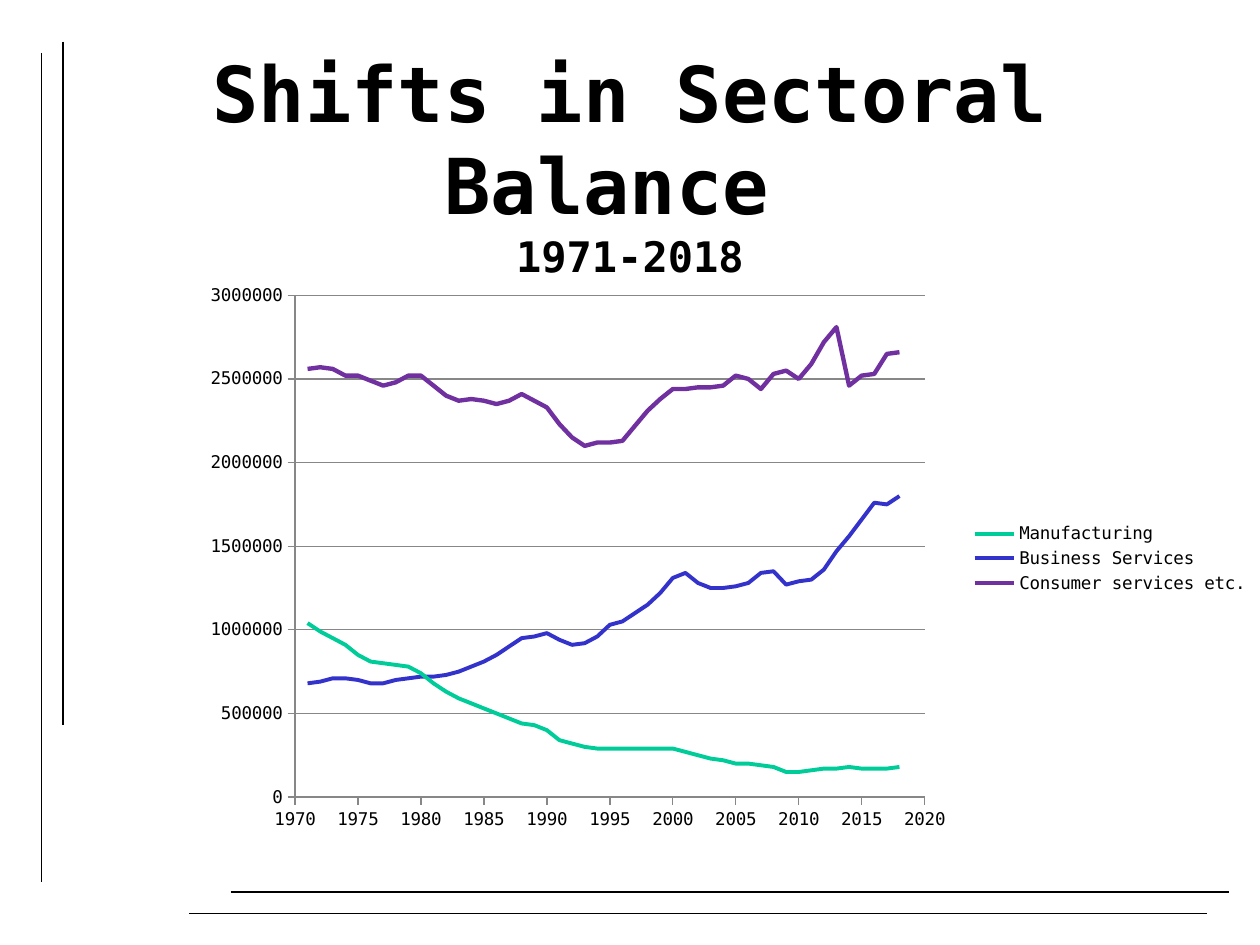
import pptx
import pptx.chart.data
import pptx.dml.color
import pptx.enum.chart
import pptx.enum.shapes
import pptx.enum.text
import pptx.oxml
import pptx.oxml.ns
import pptx.util

FONT = "DejaVu Sans Mono"
COLOURS = {
    "ink": "000000",
    "grid": "878787",
    "Manufacturing": "00CC99",
    "Business Services": "3333CC",
    "Consumer services etc.": "7030A0",
}
LINE_POINTS = {"Consumer services etc.": 2.5}
FIRST_YEAR = 1971
# Yearly values in units of ten thousand
JOBS = {
    "Manufacturing": [
        104, 99, 95, 91, 85, 81, 80, 79, 78, 74, 68, 63, 59, 56, 53, 50,
        47, 44, 43, 40, 34, 32, 30, 29, 29, 29, 29, 29, 29, 29, 27, 25,
        23, 22, 20, 20, 19, 18, 15, 15, 16, 17, 17, 18, 17, 17, 17, 18],
    "Business Services": [
        68, 69, 71, 71, 70, 68, 68, 70, 71, 72, 72, 73, 75, 78, 81, 85,
        90, 95, 96, 98, 94, 91, 92, 96, 103, 105, 110, 115, 122, 131, 134, 128,
        125, 125, 126, 128, 134, 135, 127, 129, 130, 136, 147, 156, 166, 176, 175, 180],
    "Consumer services etc.": [
        256, 257, 256, 252, 252, 249, 246, 248, 252, 252, 246, 240, 237, 238, 237, 235,
        237, 241, 237, 233, 223, 215, 210, 212, 212, 213, 222, 231, 238, 244, 244, 245,
        245, 246, 252, 250, 244, 253, 255, 250, 259, 272, 281, 246, 252, 253, 265, 266],
}


def colour(name):
    return pptx.dml.color.RGBColor.from_string(COLOURS[name])


def share(box, left, top, width=0, height=0):
    """Return the part of a box given by shares of its size."""
    x, y, w, h = box
    return int(x + left * w), int(y + top * h), int(width * w), int(height * h)


def style_line(line, name, points):
    line.color.rgb = colour(name)
    line.width = pptx.util.Pt(points)


def style_font(font, size, bold=False):
    font.name = FONT
    font.size = pptx.util.Pt(size)
    font.bold = bold
    font.color.rgb = colour("ink")


def add_rules(page, box):
    # Crossing pairs of thin rules at the left and the bottom
    rules = [(0.033, 0.056, 0.033, 0.933), (0.15, 0.967, 0.958, 0.967),
             (0.183, 0.944, 0.975, 0.944), (0.05, 0.044, 0.05, 0.767)]
    for x1, y1, x2, y2 in rules:
        start, end = share(box, x1, y1)[:2], share(box, x2, y2)[:2]
        rule = page.shapes.add_connector(
            pptx.enum.shapes.MSO_CONNECTOR.STRAIGHT, *start, *end)
        style_line(rule.line, "ink", 0.75)
        rule._element.spPr.append(pptx.oxml.parse_xml(
            "<a:effectLst %s/>" % pptx.oxml.ns.nsdecls("a")))


def add_title(page, box):
    frame = page.shapes.add_textbox(*box).text_frame
    frame.word_wrap = True
    frame.vertical_anchor = pptx.enum.text.MSO_ANCHOR.MIDDLE
    para = frame.paragraphs[0]
    para.alignment = pptx.enum.text.PP_ALIGN.CENTER
    style_font(para.font, 44, bold=True)
    heading = para.add_run()
    heading.text = "Shifts in Sectoral Balance "
    style_font(heading.font, 44, bold=True)
    para.add_line_break()
    period = para.add_run()
    period.text = "1971-2018"
    style_font(period.font, 24, bold=True)


def set_layout(part, left, top, width, height, inner=False):
    """Place a chart part by shares of the chart's size."""
    target = '<c:layoutTarget val="inner"/>' if inner else ""
    sizes = "".join(
        '<c:%s val="%s"/>' % item
        for item in zip("xywh", (left, top, width, height)))
    layout = pptx.oxml.parse_xml(
        '<c:layout %s><c:manualLayout>%s<c:xMode val="edge"/>'
        '<c:yMode val="edge"/>%s</c:manualLayout></c:layout>'
        % (pptx.oxml.ns.nsdecls("c"), target, sizes))
    for old in part.findall(pptx.oxml.ns.qn("c:layout")):
        part.remove(old)
    # The layout follows the legend position, or comes first in the plot area
    position = part.find(pptx.oxml.ns.qn("c:legendPos"))
    part.insert(0 if position is None else 1, layout)


def style_axis(axis, low, high, step):
    axis.minimum_scale, axis.maximum_scale, axis.major_unit = low, high, step
    axis.major_tick_mark = pptx.enum.chart.XL_TICK_MARK.OUTSIDE
    axis.minor_tick_mark = pptx.enum.chart.XL_TICK_MARK.NONE
    axis.tick_labels.number_format = "General"
    axis.tick_labels.number_format_is_linked = False
    style_line(axis.format.line, "grid", 0.75)


def add_sector_chart(page, box):
    data = pptx.chart.data.XyChartData()
    for name, values in JOBS.items():
        sector = data.add_series(name)
        for year, value in enumerate(values, FIRST_YEAR):
            sector.add_data_point(year, value * 10000)
    chart = page.shapes.add_chart(
        pptx.enum.chart.XL_CHART_TYPE.XY_SCATTER_LINES_NO_MARKERS, *box, data).chart
    chart.has_title = False
    style_font(chart.font, 10)

    # Axes
    style_axis(chart.category_axis, 1970, 2020, 5)
    style_axis(chart.value_axis, 0, 3000000, 500000)
    chart.category_axis.has_major_gridlines = False
    chart.value_axis.has_major_gridlines = True
    style_line(chart.value_axis.major_gridlines.format.line, "grid", 0.75)

    # Sector lines
    chart.plots[0].vary_by_categories = False
    for sector in chart.plots[0].series:
        sector.smooth = False
        sector.marker.style = pptx.enum.chart.XL_MARKER_STYLE.NONE
        style_line(sector.format.line, sector.name, LINE_POINTS.get(sector.name, 2.25))

    # Legend and plot positions
    chart.has_legend = True
    chart.legend.position = pptx.enum.chart.XL_LEGEND_POSITION.RIGHT
    chart.legend.include_in_layout = False
    set_layout(chart.legend._element, 0.73, 0.43, 0.26, 0.14)
    set_layout(chart._chartSpace.chart.plotArea, 0.099, 0.036, 0.588, 0.885, inner=True)


def main():
    deck = pptx.Presentation()
    deck.slide_width = pptx.util.Inches(10)
    deck.slide_height = pptx.util.Inches(7.5)
    page = deck.slides.add_slide(deck.slide_layouts[6])
    whole = (0, 0, deck.slide_width, deck.slide_height)
    add_rules(page, whole)
    add_title(page, share(whole, 0.075, 0.089, 0.85, 0.167))
    add_sector_chart(page, share(whole, 0.15, 0.291, 0.85, 0.6))
    deck.save("out.pptx")


if __name__ == "__main__":
    main()
